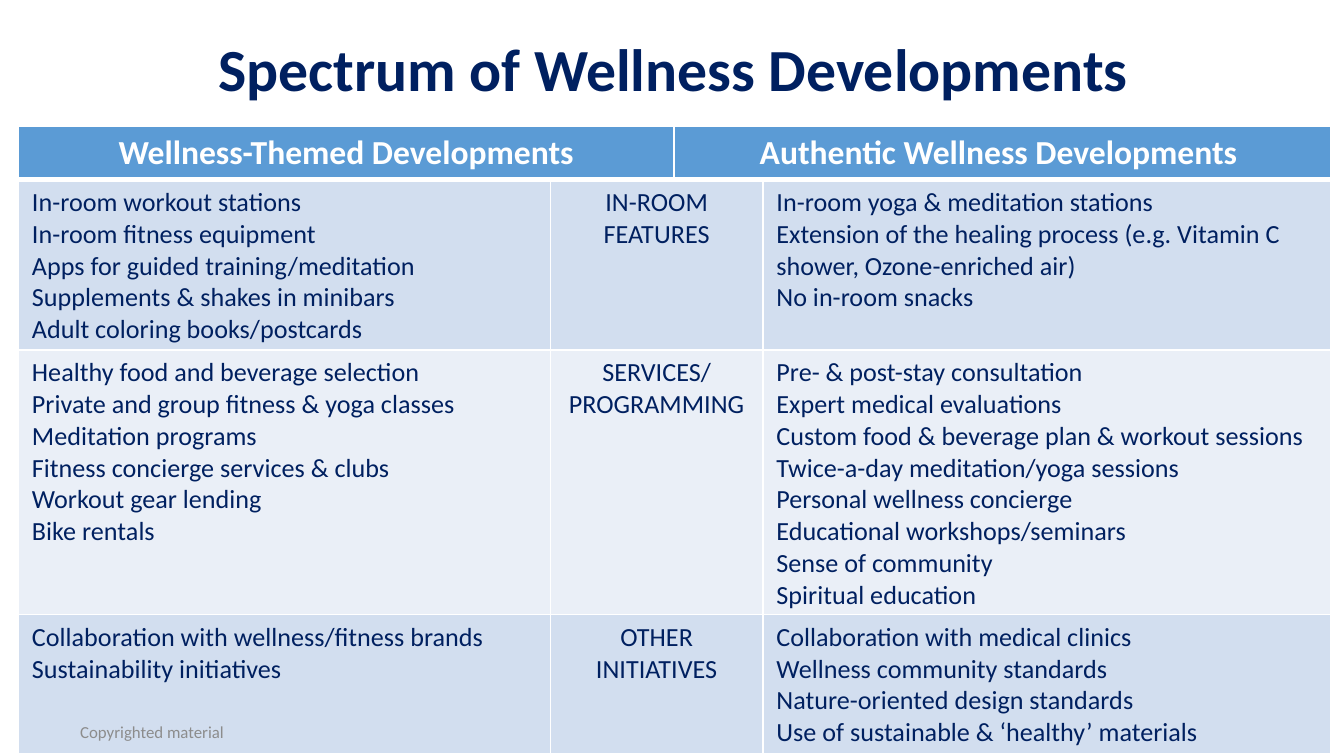
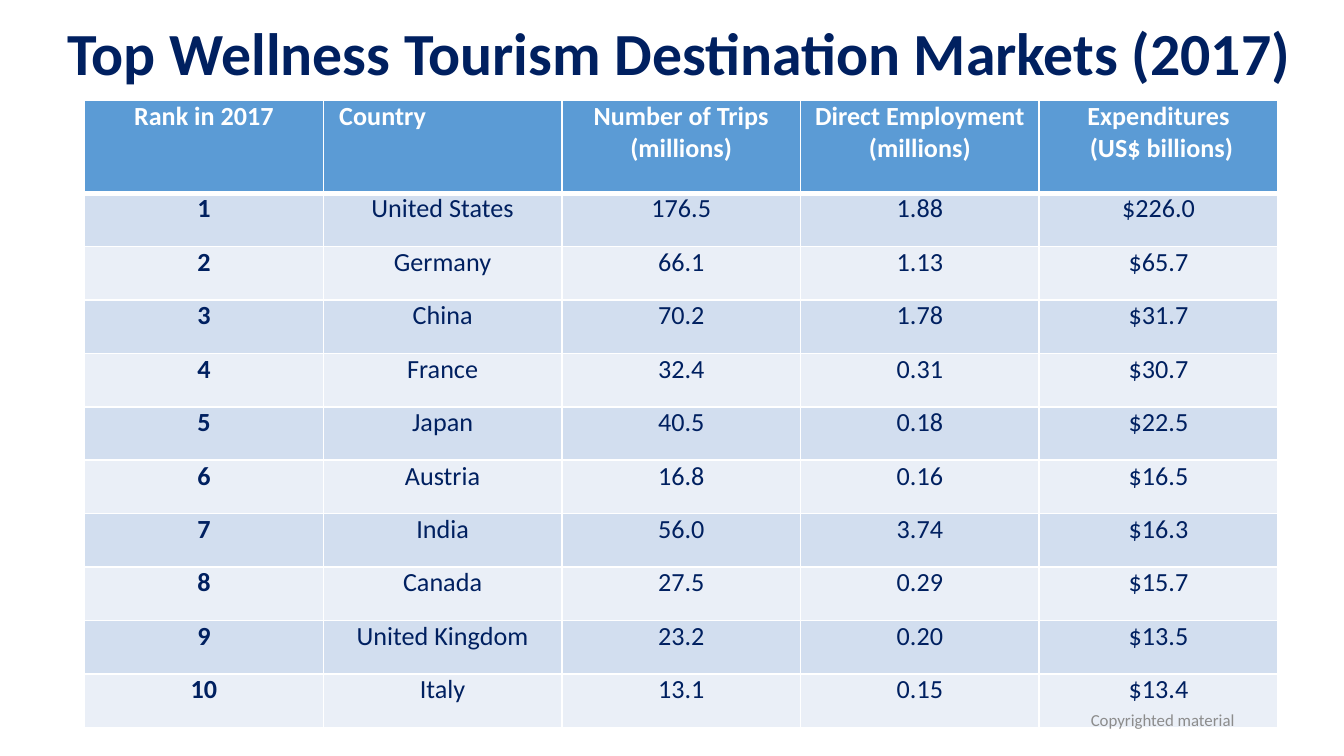
import collections

import lxml.etree
import pptx
import pptx.dml.color
import pptx.enum.text
import pptx.oxml.ns
import pptx.util

Cm = pptx.util.Cm
Pt = pptx.util.Pt
RGBColor = pptx.dml.color.RGBColor
ALIGN = pptx.enum.text.PP_ALIGN
MIDDLE = pptx.enum.text.MSO_ANCHOR.MIDDLE
qn = pptx.oxml.ns.qn

# Shared look
NAVY = RGBColor(0x00, 0x20, 0x60)
WHITE = RGBColor(0xFF, 0xFF, 0xFF)
GREY = RGBColor(0x8C, 0x8C, 0x8C)
HEADER_BLUE = RGBColor(0x5B, 0x9B, 0xD5)
BANDS = [RGBColor(0xD2, 0xDE, 0xEF), RGBColor(0xEA, 0xEF, 0xF7)]

TITLE = {"size": Pt(32), "bold": True, "color": NAVY}
FOOTER = {"size": Pt(9), "bold": False, "color": GREY}
WIDE_HEADER = {"size": Pt(18), "bold": True, "color": WHITE}
HEADER = {"size": Pt(14), "bold": True, "color": WHITE}
BODY = {"size": Pt(14), "bold": False, "color": NAVY}
RANK = {"size": Pt(14), "bold": True, "color": NAVY}

# Left, top, width and height in centimetres
Box = collections.namedtuple("Box", "left top width height")

SPECTRUM_HEADERS = ["Wellness-Themed Developments", "Authentic Wellness Developments "]
SPECTRUM = [
    (["In-room workout stations", "In-room fitness equipment",
      "Apps for guided training/meditation", "Supplements & shakes in minibars",
      "Adult coloring books/postcards"],
     "IN-ROOM FEATURES",
     ["In-room yoga & meditation stations",
      "Extension of the healing process (e.g. Vitamin C shower, Ozone-enriched air)",
      "No in-room snacks"]),
    (["Healthy food and beverage selection", "Private and group fitness & yoga classes",
      "Meditation programs", "Fitness concierge services & clubs",
      "Workout gear lending", "Bike rentals"],
     "SERVICES/ PROGRAMMING",
     ["Pre- & post-stay consultation", "Expert medical evaluations",
      "Custom food & beverage plan & workout sessions",
      "Twice-a-day meditation/yoga sessions", "Personal wellness concierge",
      "Educational workshops/seminars", "Sense of community", "Spiritual education"]),
    (["Collaboration with wellness/fitness brands", "Sustainability initiatives"],
     "OTHER INITIATIVES",
     ["Collaboration with medical clinics", "Wellness community standards",
      "Nature-oriented design standards", "Use of sustainable & ‘healthy’ materials"]),
]

MARKET_HEADERS = [
    ["Rank in 2017"], [" Country"], ["Number of Trips", "(millions)"],
    ["Direct Employment", "(millions)"], ["Expenditures\n (US$ billions)"],
]
MARKETS = [
    ("United States", "176.5", "1.88", "$226.0"),
    ("Germany", "66.1", "1.13", "$65.7"),
    ("China", "70.2", "1.78", "$31.7"),
    ("France", "32.4", "0.31", "$30.7"),
    ("Japan", "40.5", "0.18", "$22.5"),
    ("Austria", "16.8", "0.16", "$16.5"),
    ("India", "56.0", "3.74", "$16.3"),
    ("Canada", "27.5", "0.29", "$15.7"),
    ("United Kingdom", "23.2", "0.20", "$13.5"),
    ("Italy", "13.1", "0.15", "$13.4"),
]


def write_lines(frame, lines, style, align):
    """Fill a text frame with one paragraph for each line."""
    for index, line in enumerate(lines):
        para = frame.add_paragraph() if index else frame.paragraphs[0]
        para.text = line
        para.alignment = align
        for span in para.runs:
            span.font.name = "Calibri"
            for name, value in style.items():
                if name == "color":
                    span.font.color.rgb = value
                else:
                    setattr(span.font, name, value)


def add_text(page, box, text, style, align):
    shape = page.shapes.add_textbox(*map(Cm, box))
    frame = shape.text_frame
    frame.word_wrap = True
    frame.vertical_anchor = MIDDLE
    write_lines(frame, [text], style, align)
    return frame


def add_title(page, box, text):
    frame = add_text(page, box, text, TITLE, ALIGN.CENTER)
    frame.paragraphs[0].line_spacing = 0.9


def add_footer(page, box):
    add_text(page, box, "Copyrighted material ", FOOTER, ALIGN.RIGHT)


def set_borders(cell, bottom_width):
    """Draw white cell borders, with a chosen width below."""
    properties = cell._tc.get_or_add_tcPr()
    widths = {"a:lnL": 1, "a:lnR": 1, "a:lnT": 1, "a:lnB": bottom_width}
    for tag, width in widths.items():
        line = lxml.etree.SubElement(properties, qn(tag), w=str(Pt(width)))
        fill = lxml.etree.SubElement(line, qn("a:solidFill"))
        lxml.etree.SubElement(fill, qn("a:srgbClr"), val=str(WHITE))


def add_banded_table(page, box, column_shares, row_shares):
    """Add a table whose columns and rows share out the box."""
    frame = page.shapes.add_table(len(row_shares), len(column_shares), *map(Cm, box))
    table = frame.table
    for column, share in zip(table.columns, column_shares):
        column.width = Cm(box.width * share / sum(column_shares))
    for row, share in zip(table.rows, row_shares):
        row.height = Cm(box.height * share / sum(row_shares))
    for index, row in enumerate(table.rows):
        for cell in row.cells:
            set_borders(cell, 1 if index else 3)
            cell.fill.solid()
            cell.fill.fore_color.rgb = BANDS[(index - 1) % 2] if index else HEADER_BLUE
    return table


def add_spectrum_table(page, box):
    table = add_banded_table(page, box, [10.05, 2.34, 1.68, 10.73],
                             [1.02, 3.15, 4.9, 2.57])
    # Two wide headings
    for column, heading in zip((0, 2), SPECTRUM_HEADERS):
        cell = table.cell(0, column)
        cell.merge(table.cell(0, column + 1))
        write_lines(cell.text_frame, [heading], WIDE_HEADER, ALIGN.CENTER)
    # Topic in the middle, examples on both sides
    for row, (themed, topic, authentic) in enumerate(SPECTRUM, 1):
        middle = table.cell(row, 1)
        middle.merge(table.cell(row, 2))
        write_lines(table.cell(row, 0).text_frame, themed, BODY, ALIGN.LEFT)
        write_lines(middle.text_frame, [topic], BODY, ALIGN.CENTER)
        write_lines(table.cell(row, 3).text_frame, authentic, BODY, ALIGN.LEFT)


def add_market_table(page, box):
    table = add_banded_table(page, box, [1] * len(MARKET_HEADERS),
                             [1.75] + [1.01] * len(MARKETS))
    margins = {"margin_left": Cm(0.19), "margin_right": Cm(0.19),
               "margin_top": 0, "margin_bottom": 0}
    for cell in table.iter_cells():
        for name, value in margins.items():
            setattr(cell, name, value)
    # Headings
    for column, lines in enumerate(MARKET_HEADERS):
        align = ALIGN.LEFT if column == 1 else ALIGN.CENTER
        write_lines(table.cell(0, column).text_frame, lines, HEADER, align)
    # Ranked countries
    for rank, market in enumerate(MARKETS, 1):
        for column, value in enumerate((str(rank), *market)):
            style = BODY if column else RANK
            write_lines(table.cell(rank, column).text_frame, [value], style, ALIGN.CENTER)


def main():
    deck = pptx.Presentation()
    deck.slide_width, deck.slide_height = Cm(25.4), Cm(14.29)
    blank = deck.slide_layouts[6]

    # Spectrum of developments
    page = deck.slides.add_slide(blank)
    add_title(page, Box(1.78, 0.2, 21.9, 2.34), "Spectrum of Wellness Developments")
    add_spectrum_table(page, Box(0.35, 2.38, 24.8, 11.64))
    add_footer(page, Box(0, 13.46, 4.55, 0.76))

    # Destination markets
    page = deck.slides.add_slide(blank)
    add_title(page, Box(0.94, -0.13, 23.8, 2.39),
              "Top Wellness Tourism Destination Markets (2017)")
    add_market_table(page, Box(1.6, 1.9, 22.55, 11.85))
    add_footer(page, Box(17.93, 13.23, 5.72, 0.76))

    deck.save("out.pptx")


if __name__ == "__main__":
    main()
